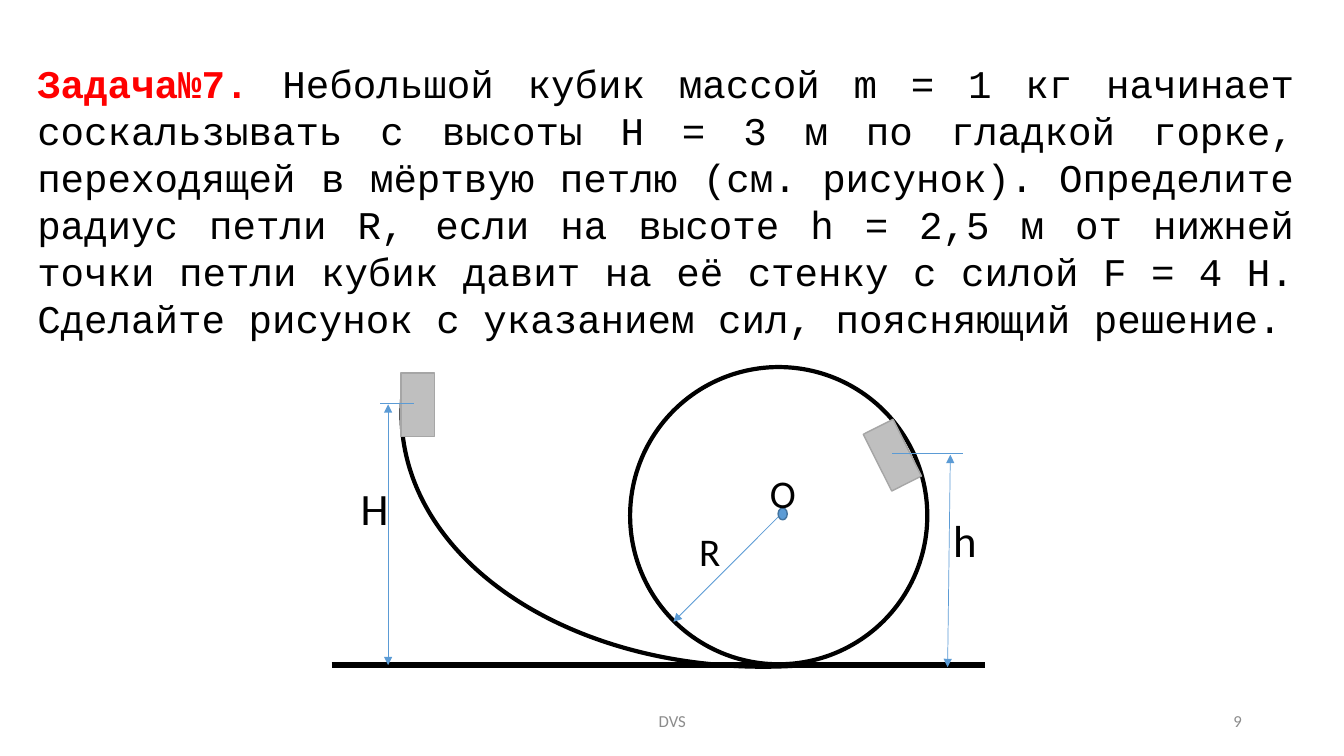
import pptx
import pptx.util
import pptx.dml.color
import pptx.enum.shapes
import pptx.enum.text
import pptx.oxml.ns
import lxml.etree

Cm = pptx.util.Cm
Pt = pptx.util.Pt
Kind = pptx.enum.shapes.MSO_SHAPE
Align = pptx.enum.text.PP_ALIGN
Anchor = pptx.enum.text.MSO_ANCHOR

HUES = {
    "black": "000000",
    "red": "FF0000",
    "grey": "8C8C8C",
    "cube": "BFBFBF",
    "edge": "A6A6A6",
    "blue": "5B9BD5",
    "navy": "43739E",
}
TASK = (
    "Небольшой кубик массой m = 1 кг начинает соскальзывать с высоты Н = 3 м "
    "по гладкой горке, переходящей в мёртвую петлю (см. рисунок). "
    "Определите радиус петли R, если на высоте h = 2,5 м от нижней точки петли "
    "кубик давит на её стенку с силой F = 4 Н. "
    "Сделайте рисунок с указанием сил, поясняющий решение."
)
FLOOR = 16.76


def tint(name):
    return pptx.dml.color.RGBColor.from_string(HUES[name])


def add_text(slide, box, runs, size=28, font="Calibri", align=Align.LEFT,
             anchor=Anchor.TOP, wrap=True):
    frame = slide.shapes.add_textbox(*map(Cm, box)).text_frame
    frame.word_wrap = wrap
    frame.vertical_anchor = anchor
    par = frame.paragraphs[0]
    par.alignment = align
    for words, hue, bold in runs:
        run = par.add_run()
        run.text = words
        run.font.name = font
        run.font.size = Pt(size)
        run.font.bold = bold
        run.font.color.rgb = tint(hue)


def add_form(slide, kind, box, line, width, fill=None, turn=0):
    form = slide.shapes.add_shape(kind, *map(Cm, box))
    form.shadow.inherit = False
    form.rotation = turn
    form.line.color.rgb = tint(line)
    form.line.width = Pt(width)
    if fill:
        form.fill.solid()
        form.fill.fore_color.rgb = tint(fill)
    else:
        form.fill.background()
    return form


def add_line(slide, start, end, hue="blue", width=0.5, heads=()):
    line = slide.shapes.add_connector(
        pptx.enum.shapes.MSO_CONNECTOR.STRAIGHT, *map(Cm, start + end))
    line.line.color.rgb = tint(hue)
    line.line.width = Pt(width)
    qn = pptx.oxml.ns.qn
    for head in heads:
        lxml.etree.SubElement(
            line.line._get_or_add_ln(), qn(f"a:{head}"), type="triangle")
    lxml.etree.SubElement(line._element.spPr, qn("a:effectLst"))


def add_cube(slide, left, top, turn=0):
    add_form(slide, Kind.RECTANGLE, (left, top, 0.84, 1.6),
             "edge", 1, "cube", turn)


def add_track(slide):
    add_form(slide, Kind.OVAL, (15.88, 9.25, 7.49, 7.49), "black", 3)
    slope = add_form(slide, Kind.ARC, (10.11, 3.56, 19, 13.23),
                     "black", 3, turn=176.9)
    slope.adjustments[0] = 162
    slope.adjustments[1] = 4.44
    add_cube(slide, 10.11, 9.4)
    add_line(slide, (8.36, FLOOR), (24.82, FLOOR), "black", 4.5)
    add_cube(slide, 22.07, 10.67, 333.4)


def add_sizes(slide):
    both = ("headEnd", "tailEnd")
    add_line(slide, (9.58, 10.16), (10.44, 10.16))
    add_line(slide, (9.78, 10.19), (9.78, FLOOR), heads=both)
    add_line(slide, (19.61, 13.03), (16.97, 15.67), heads=("tailEnd",))
    add_form(slide, Kind.OVAL, (19.61, 12.8, 0.23, 0.3), "navy", 1, "blue")
    add_line(slide, (22.48, 11.43), (24.26, 11.43))
    add_line(slide, (23.95, 11.46), (23.88, 16.81), heads=both)
    for mark, box, size in (
        ("H", (8.84, 11.99, 1.22, 1.63), 32),
        ("R", (17.37, 13.16, 1.07, 1.45), 28),
        ("O", (19.15, 11.71, 1.17, 1.45), 28),
        ("h", (23.77, 12.8, 1.12, 1.63), 32),
    ):
        add_text(slide, box, [(mark, "black", False)], size=size, wrap=False)


def main():
    deck = pptx.Presentation()
    deck.slide_width = Cm(33.87)
    deck.slide_height = Cm(19.05)
    slide = deck.slides.add_slide(deck.slide_layouts[6])
    add_text(slide, (11.23, 17.65, 11.43, 1.02), [("DVS", "grey", False)],
             size=12, align=Align.CENTER, anchor=Anchor.MIDDLE)
    add_text(slide, (23.93, 17.65, 7.62, 1.02), [("9", "grey", False)],
             size=12, align=Align.RIGHT, anchor=Anchor.MIDDLE)
    add_text(slide, (0.69, 1.37, 32.18, 7.44),
             [("Задача№7. ", "red", True), (TASK, "black", False)],
             font="Courier New", align=Align.JUSTIFY)
    add_track(slide)
    add_sizes(slide)
    deck.save("out.pptx")


if __name__ == "__main__":
    main()
